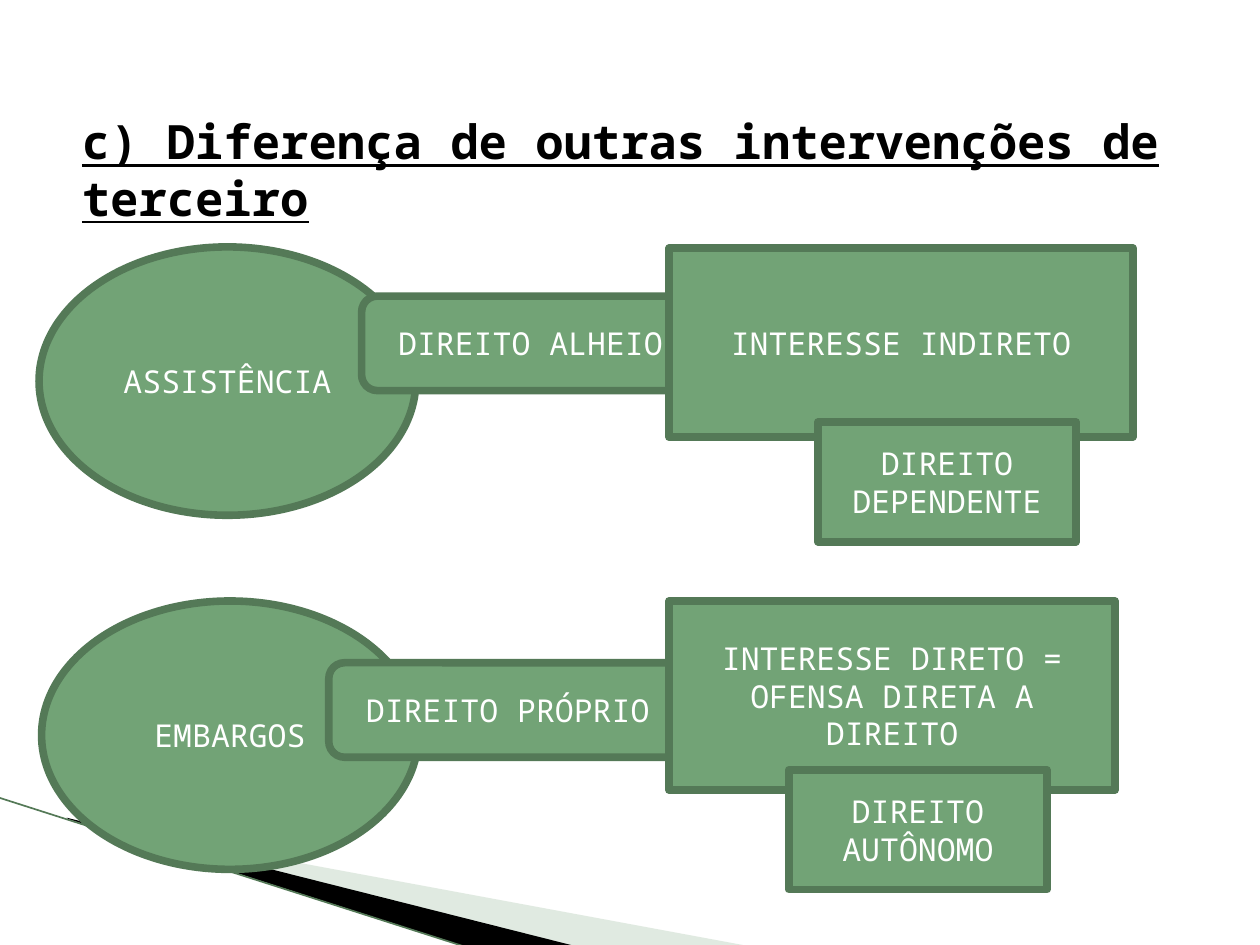
from lxml.etree import SubElement
from pptx import Presentation
from pptx.dml.color import RGBColor
from pptx.enum.shapes import MSO_CONNECTOR, MSO_SHAPE
from pptx.enum.text import MSO_ANCHOR, PP_ALIGN
from pptx.oxml.ns import qn
from pptx.util import Inches, Pt

FONT = "Noto Sans Mono"
GREEN = RGBColor(0x72, 0xA3, 0x76)
DARK = RGBColor(0x54, 0x79, 0x57)
PALE = RGBColor(0xB3, 0xCB, 0xB5)
BLACK = RGBColor(0, 0, 0)
WHITE = RGBColor(255, 255, 255)


def write(frame, text, size=18, color=WHITE, bold=False, line=False,
          align=PP_ALIGN.CENTER, anchor=MSO_ANCHOR.MIDDLE):
    """Put one formatted paragraph in a text frame."""
    frame.word_wrap = True
    frame.vertical_anchor = anchor
    para = frame.paragraphs[0]
    para.alignment = align
    run = para.add_run()
    run.text = text
    font = run.font
    font.name, font.size, font.bold, font.underline = FONT, Pt(size), bold, line
    font.color.rgb = color


def add_node(slide, kind, box, text):
    """Draw one labelled green shape."""
    node = slide.shapes.add_shape(kind, *map(Inches, box))
    node.shadow.inherit = False
    node.fill.solid()
    node.fill.fore_color.rgb = GREEN
    node.line.color.rgb = DARK
    node.line.width = Pt(4.33)
    write(node.text_frame, text)


def add_row(slide, left, top, subject, right, interest, result):
    """Draw a subject, its right, its interest and the result from a corner."""
    kinds = (MSO_SHAPE.OVAL, MSO_SHAPE.ROUNDED_RECTANGLE,
             MSO_SHAPE.FLOWCHART_PROCESS, MSO_SHAPE.RECTANGLE)
    for kind, (text, x, y, wide, high) in zip(kinds, (subject, right, interest, result)):
        add_node(slide, kind, (left + x, top + y, wide, high), text)


def add_wedge(slide, left, top, points, color, alpha=100):
    """Draw a filled outline from points relative to its corner."""
    spots = [(Inches(left + x), Inches(top + y)) for x, y in points]
    build = slide.shapes.build_freeform(*spots[0], scale=1.0)
    build.add_line_segments(spots[1:], close=True)
    wedge = build.convert_to_shape()
    wedge.shadow.inherit = False
    wedge.fill.solid()
    wedge.fill.fore_color.rgb = color
    wedge.line.fill.background()
    if alpha < 100:
        tone = wedge.fill._xPr.find(qn("a:solidFill"))[0]
        SubElement(tone, qn("a:alpha"), val=str(alpha * 1000))


def add_swoosh(slide, left, top):
    """Draw the decoration at the foot of the slide."""
    add_wedge(slide, left + 0.56, top + 0.17,
              [(0, 0.01), (5.4, 1.01), (4.01, 1.01), (0, 0)], PALE, 40)
    add_wedge(slide, left + 0.54, top + 0.16,
              [(0, 0), (4.04, 1.02), (3.19, 1.03), (0.01, 0.01)], BLACK)
    edge = slide.shapes.add_connector(
        MSO_CONNECTOR.STRAIGHT, Inches(left), Inches(top),
        Inches(left + 3.72), Inches(top + 1.19))
    edge.line.color.rgb = DARK
    edge.line.width = Pt(0.95)
    SubElement(edge._element.spPr, qn("a:effectLst"))


def add_title(slide, left, top, width, height):
    """Write the heading in its box."""
    box = slide.shapes.add_textbox(*map(Inches, (left, top, width, height)))
    box.text_frame.margin_left = Inches(0.22)
    write(box.text_frame, "c) Diferença de outras intervenções de terceiro",
          size=27, color=BLACK, bold=True, line=True,
          align=PP_ALIGN.LEFT, anchor=MSO_ANCHOR.TOP)


def main():
    """Build and save the slide."""
    deck = Presentation()
    deck.slide_width, deck.slide_height = Inches(10), Inches(7.5)
    slide = deck.slides.add_slide(deck.slide_layouts[6])
    add_swoosh(slide, -0.01, 6.33)
    add_title(slide, 0.43, 0.84, 9.07, 6.35)
    add_row(slide, 0.31, 1.96,
            ("ASSISTÊNCIA", 0, 0, 2.99, 2.13),
            ("DIREITO ALHEIO", 2.56, 0.39, 2.68, 0.75),
            ("INTERESSE INDIRETO", 5, 0.01, 3.68, 1.5),
            ("DIREITO DEPENDENTE", 6.18, 1.39, 2.05, 0.95))
    add_row(slide, 0.33, 4.77,
            ("EMBARGOS", 0, 0, 2.99, 2.13),
            ("DIREITO PRÓPRIO", 2.28, 0.49, 2.84, 0.75),
            ("INTERESSE DIRETO = OFENSA DIRETA A DIREITO", 4.98, 0, 3.54, 1.5),
            ("DIREITO AUTÔNOMO", 5.93, 1.34, 2.05, 0.95))
    deck.save("out.pptx")


if __name__ == "__main__":
    main()
